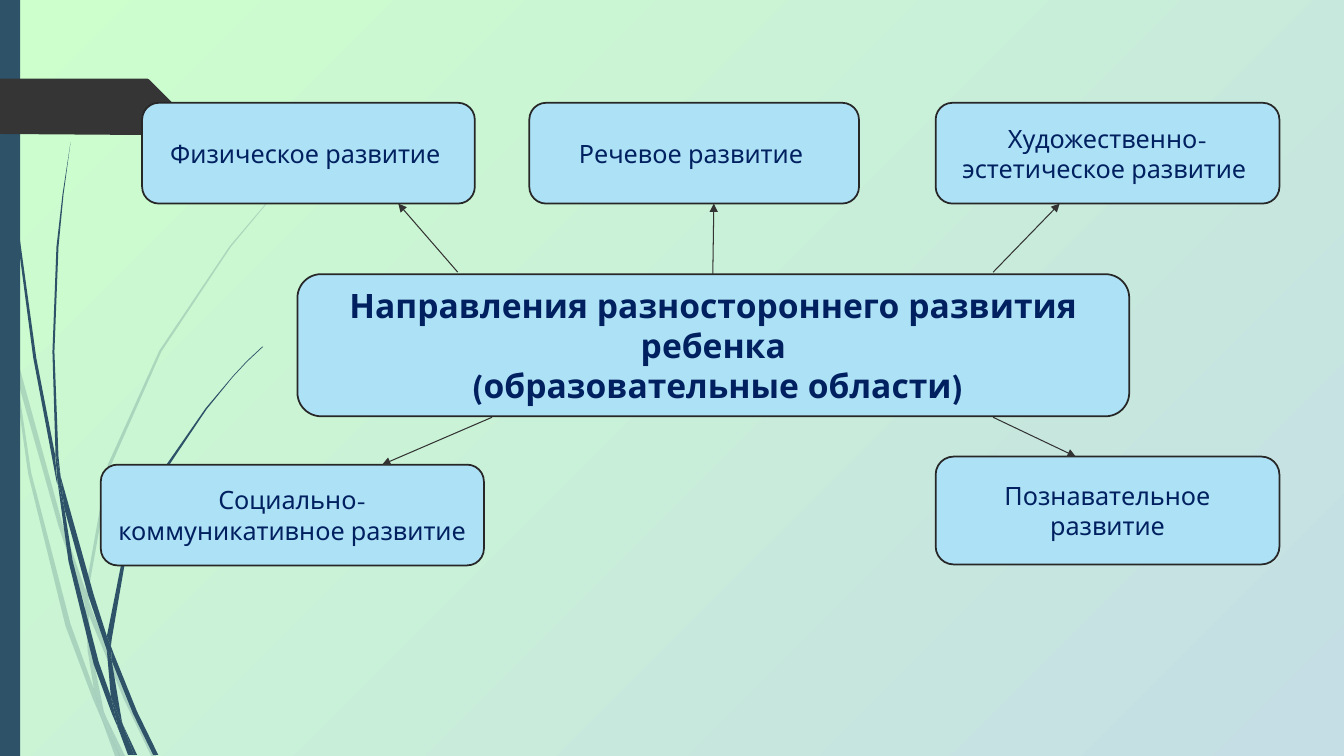
from copy import deepcopy

from lxml import etree
from pptx import Presentation
from pptx.dml.color import RGBColor
from pptx.enum.shapes import MSO_CONNECTOR, MSO_SHAPE
from pptx.enum.text import MSO_ANCHOR, PP_ALIGN
from pptx.oxml.ns import qn
from pptx.util import Inches, Pt

RECT, ROUND = MSO_SHAPE.RECTANGLE, MSO_SHAPE.ROUNDED_RECTANGLE
STRAIGHT = MSO_CONNECTOR.STRAIGHT
CENTER, MIDDLE = PP_ALIGN.CENTER, MSO_ANCHOR.MIDDLE
FONT = "League Spartan"
NAVY, STEEL, SKY, EDGE = "002060", "2E5369", "ADE1F5", "272727"
BACKGROUND = ("99FF99", "CCFFCC", "C5DEE5")

BOXES = [
    (1.41, 1.02, 3.3, 1, 18, False, ["Физическое развитие "]),
    (5.25, 1.02, 3.27, 1, 18, False, ["Речевое развитие "]),
    (9.28, 1.02, 3.41, 1, 18, False, ["Художественно- эстетическое развитие "]),
    (1, 4.61, 3.8, 1, 18, False, ["Социально- коммуникативное развитие "]),
    (9.28, 4.53, 3.41, 1.07, 18, False, ["Познавательное развитие"]),
    (2.95, 2.72, 8.25, 1.41, 24, True,
     ["Направления разностороннего развития ребенка", " (образовательные области)"]),
]
ARROWS = [
    (4.54, 2.7, 3.95, 2.02),
    (7.07, 2.72, 7.08, 2.02),
    (9.85, 2.7, 10.51, 2.02),
    (4.88, 4.14, 3.79, 4.61),
    (9.85, 4.14, 10.67, 4.53),
]
PALE_STALKS = [
    [(0.11, 3.5), (0.09, 3.22), (0, 2.82), (0, 2.99), (0.1, 3.44)],
    [(0.58, 5.22), (0.84, 5.99), (0.85, 5.86), (0.62, 5.2), (0.14, 3.45), (0.17, 3.76)],
    [(0.92, 6.07), (0.88, 5.96), (0.88, 6.1), (1.23, 6.94), (1.5, 7.5), (1.55, 7.5),
     (1.27, 6.92)],
    [(1.19, 7.5), (1.24, 7.5), (1.05, 7.11)],
    [(0.93, 6.83), (0.7, 6.19), (0.31, 4.69), (0.17, 3.76), (0.11, 3.5), (0.28, 4.7),
     (0.65, 6.21), (0.92, 6.93), (1.01, 7.14), (0.99, 7.07)],
    [(0.84, 5.99), (0.87, 6.46), (0.93, 6.83), (0.96, 6.92), (1.05, 7.11), (1.03, 7.06),
     (0.91, 6.46), (0.88, 6.1), (0.88, 6.08)],
    [(0.88, 5.84), (1.1, 4.62), (1.6, 3.49), (2.29, 2.45), (2.68, 1.98), (2.9, 1.75),
     (3.12, 1.54), (3.12, 1.53), (2.89, 1.75), (2.68, 1.97), (2.28, 2.44), (1.58, 3.48),
     (1.07, 4.61), (0.85, 5.84), (0.85, 5.86), (0.88, 5.96)],
    [(1.01, 7.14), (1.14, 7.5), (1.19, 7.5)],
    [(0.88, 6.08), (0.88, 6.1), (0.88, 5.96), (0.85, 5.86), (0.84, 5.99)],
    [(0.96, 6.92), (0.93, 6.83), (0.99, 7.07), (1.01, 7.14), (1.19, 7.5), (1.05, 7.11)],
]
DARK_STALKS = [
    [(0.07, 1.1), (0.17, 2.33), (0.33, 3.55), (0.56, 4.77), (0.57, 4.81), (0.55, 4.57),
     (0.55, 4.53), (0.36, 3.55), (0.19, 2.32), (0.08, 1.09), (0.05, 0.48), (0.04, 0),
     (0.03, 0), (0.04, 0.48)],
    [(0.88, 5.92), (1.06, 6.45), (1.06, 6.33), (1.06, 6.31), (0.93, 5.9), (0.6, 4.72),
     (0.64, 5.05)],
    [(1.13, 6.49), (1.1, 6.41), (1.11, 6.56), (1.32, 7.08), (1.52, 7.49), (1.57, 7.49),
     (1.36, 7.06)],
    [(1.1, 6.91), (0.98, 6.57), (0.72, 5.56), (0.64, 5.05), (0.57, 4.77), (0.68, 5.57),
     (0.93, 6.59), (1.11, 7.08), (1.17, 7.22), (1.16, 7.17)],
    [(0.6, 4.72), (0.58, 4.53), (0.54, 3.49), (0.58, 2.45), (0.63, 1.93), (0.7, 1.41),
     (0.62, 1.93), (0.56, 2.45), (0.52, 3.49), (0.55, 4.49)],
    [(1.33, 7.49), (1.36, 7.49), (1.22, 7.19)],
    [(0.57, 4.77), (0.64, 5.05), (0.6, 4.72), (0.55, 4.49), (0.55, 4.53)],
    [(1.11, 6.33), (1.25, 5.52), (1.58, 4.76), (2.05, 4.06), (2.31, 3.74), (2.45, 3.59),
     (2.61, 3.44), (2.6, 3.44), (2.45, 3.58), (2.31, 3.73), (2.04, 4.05), (1.56, 4.74),
     (1.22, 5.51), (1.06, 6.31), (1.1, 6.41)],
    [(1.17, 7.22), (1.27, 7.49), (1.31, 7.49)],
    [(1.06, 6.45), (1.1, 6.91), (1.16, 7.06), (1.22, 7.19), (1.21, 7.16), (1.11, 6.56),
     (1.09, 6.51)],
    [(1.06, 6.45), (1.09, 6.51), (1.11, 6.56), (1.1, 6.41), (1.06, 6.31), (1.06, 6.33)],
    [(1.16, 7.06), (1.1, 6.91), (1.16, 7.17), (1.17, 7.22), (1.3, 7.49), (1.33, 7.49),
     (1.22, 7.19)],
]
TAG = [(1.73, 1.08), (1.48, 1.33), (1.46, 1.34), (0, 1.33), (0, 0.78), (1.46, 0.78),
       (1.48, 0.79), (1.73, 1.04), (1.74, 1.06)]


def rgb(value):
    return RGBColor.from_string(value)


def paint(sp, color):
    sp.shadow.inherit = False
    sp.fill.solid()
    sp.fill.fore_color.rgb = rgb(color)
    sp.line.fill.background()
    return sp


def add_block(s, kind, x, y, w, h, color):
    return paint(s.shapes.add_shape(kind, Inches(x), Inches(y), Inches(w), Inches(h)), color)


def add_outline(s, points, color, alpha=None):
    points = [(Inches(x), Inches(y)) for x, y in points]
    builder = s.shapes.build_freeform(*points[0])
    builder.add_line_segments(points[1:], close=True)
    sp = paint(builder.convert_to_shape(), color)
    if alpha:
        fill = sp._element.spPr.find(".//" + qn("a:srgbClr"))
        etree.SubElement(fill, qn("a:alpha"), val=str(alpha * 1000))


def add_box(s, x, y, w, h, size, bold, lines):
    sp = add_block(s, ROUND, x, y, w, h, SKY)
    sp.line.color.rgb = rgb(EDGE)
    sp.line.width = Pt(1.25)
    tf = sp.text_frame
    tf.word_wrap = True
    tf.vertical_anchor = MIDDLE
    tf.text = "\n".join(lines)
    for p in tf.paragraphs:
        p.alignment = CENTER
        p.font.name, p.font.size, p.font.bold = FONT, Pt(size), bold
        p.font.color.rgb = rgb(NAVY)


def add_arrow(s, *ends):
    line = s.shapes.add_connector(STRAIGHT, *map(Inches, ends))
    line.line.color.rgb = rgb("333333")
    line.line.width = Pt(0.75)
    etree.SubElement(line.line._get_or_add_ln(), qn("a:tailEnd"), type="triangle")
    etree.SubElement(line._element.spPr, qn("a:effectLst"))


def set_background(s):
    fill = s.background.fill
    fill.gradient()
    fill.gradient_angle = 315
    stops = s._element.find(".//" + qn("a:gsLst"))
    stops.insert(0, deepcopy(stops[0]))
    for stop, color in zip(fill.gradient_stops, BACKGROUND):
        stop.color.rgb = rgb(color)


def main():
    prs = Presentation()
    prs.slide_width, prs.slide_height = Inches(13.33), Inches(7.5)
    s = prs.slides.add_slide(prs.slide_layouts[6])
    set_background(s)
    for points in PALE_STALKS:
        add_outline(s, points, STEEL, alpha=20)
    for points in DARK_STALKS:
        add_outline(s, points, STEEL)
    add_block(s, RECT, 0, 0, 0.2, 7.5, STEEL)
    add_outline(s, TAG, "353535")
    for box in BOXES:
        add_box(s, *box)
    for arrow in ARROWS:
        add_arrow(s, *arrow)
    prs.save("out.pptx")


if __name__ == "__main__":
    main()
